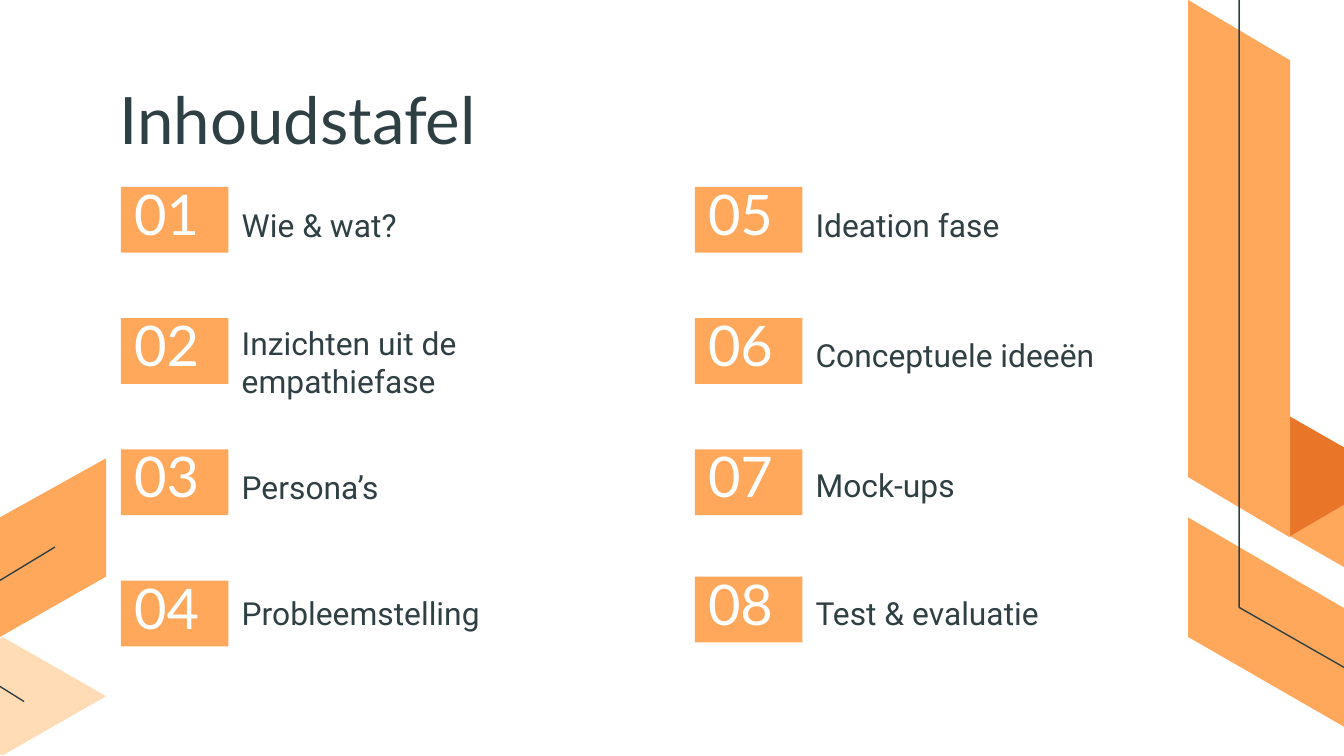
from dataclasses import dataclass

from pptx import Presentation
from pptx.dml.color import RGBColor
from pptx.enum.shapes import MSO_SHAPE
from pptx.enum.text import MSO_ANCHOR as Anchor, MSO_AUTO_SIZE as AutoSize, PP_ALIGN as Align
from pptx.util import Inches, Pt

ORANGE = RGBColor(0xFF, 0xA8, 0x5C)
PALE = RGBColor(0xFF, 0xDC, 0xB6)
BURNT = RGBColor(0xE9, 0x75, 0x29)
DARK = RGBColor(0x2F, 0x40, 0x44)
WHITE = RGBColor(0xFF, 0xFF, 0xFF)

SLIDE_WIDTH = Inches(10)
SLIDE_HEIGHT = SLIDE_WIDTH * 9 // 16

# Grid of the contents list, in inches
COLUMN_LEFTS = (0.9, 5.17)
ROWS = 4
FIRST_ROW, LAST_ROW = 1.39, 4.32
ROW_PITCH = (LAST_ROW - FIRST_ROW) / (ROWS - 1)
BADGE_WIDTH, BADGE_HEIGHT = 0.8, 0.49
LABEL_DROP, LABEL_HEIGHT = 0.04, 0.42


@dataclass(frozen=True)
class Entry:
    label: str
    width: float = 2.26
    label_shift: float = 0
    badge_shift: float = 0


@dataclass(frozen=True)
class Band:
    points: tuple[tuple[float, float], ...]
    fill: RGBColor


ENTRIES = (
    Entry("Wie & wat?"),
    Entry("Inzichten uit de empathiefase", 2.52, label_shift=-0.1),
    Entry("Persona’s"),
    Entry("Probleemstelling", label_shift=-0.04),
    Entry("Ideation fase"),
    Entry("Conceptuele ideeën", 2.43, label_shift=-0.01),
    Entry("Mock-ups", 2.43, label_shift=-0.02),
    Entry("Test & evaluatie", 2.43, label_shift=-0.04, badge_shift=-0.03),
)

BANDS = (
    Band(((0, 3.85), (0.79, 3.41), (0.79, 4.29), (0, 4.74)), ORANGE),
    Band(((0.02, 5.62), (-0.75, 5.18), (0.02, 4.74), (0.79, 5.18)), PALE),
    Band(((10.37, 4.43), (11.14, 3.99), (10.37, 3.54), (9.6, 3.99)), ORANGE),
    Band(((10.37, 3.54), (9.6, 3.99), (9.6, 3.1)), BURNT),
    Band(((8.84, 0), (8.84, 3.55), (9.6, 4), (9.6, 0.45)), ORANGE),
    Band(((8.84, 4.74), (8.84, 3.85), (10.37, 4.74), (10.37, 5.62)), ORANGE),
)

THIN_LINES = (
    ((0.18, 5.22), (-0.3, 4.92), (-0.3, 4.5), (0.41, 4.07)),
    ((9.22, 0), (9.22, 4.52), (10.83, 5.44)),
)


def write(box, text: str, *, font: str, size: float, color: RGBColor,
          top_inset: float = 0, anchor=Anchor.TOP) -> None:
    frame = box.text_frame
    frame.word_wrap = True
    frame.auto_size = AutoSize.NONE
    frame.vertical_anchor = anchor
    frame.margin_left = frame.margin_right = frame.margin_bottom = Inches(0.1)
    frame.margin_top = Inches(top_inset)
    para = frame.paragraphs[0]
    para.alignment = Align.LEFT
    span = para.add_run()
    span.text = text
    span.font.name = font
    span.font.size = Pt(size)
    span.font.color.rgb = color


def draw_outline(page, points, close: bool):
    corners = [(Inches(x), Inches(y)) for x, y in points]
    builder = page.shapes.build_freeform(*corners[0])
    builder.add_line_segments(corners[1:], close=close)
    shape = builder.convert_to_shape()
    shape.shadow.inherit = False
    return shape


def draw_band(page, band: Band) -> None:
    shape = draw_outline(page, band.points, close=True)
    shape.fill.solid()
    shape.fill.fore_color.rgb = band.fill
    shape.line.fill.background()


def draw_thin_line(page, points) -> None:
    shape = draw_outline(page, points, close=False)
    shape.fill.background()
    shape.line.color.rgb = DARK
    shape.line.width = Pt(0.75)


def draw_entry(page, index: int, entry: Entry) -> None:
    column, row = divmod(index, ROWS)
    left = COLUMN_LEFTS[column]
    top = FIRST_ROW + row * ROW_PITCH

    badge = page.shapes.add_shape(
        MSO_SHAPE.RECTANGLE, Inches(left), Inches(top + entry.badge_shift),
        Inches(BADGE_WIDTH), Inches(BADGE_HEIGHT))
    badge.shadow.inherit = False
    badge.fill.solid()
    badge.fill.fore_color.rgb = ORANGE
    badge.line.fill.background()
    write(badge, f"{index + 1:02}", font="Lato", size=30, color=WHITE, anchor=Anchor.MIDDLE)

    label = page.shapes.add_textbox(
        Inches(left + BADGE_WIDTH), Inches(top + LABEL_DROP + entry.label_shift),
        Inches(entry.width), Inches(LABEL_HEIGHT))
    write(label, entry.label, font="Roboto", size=17, color=DARK, top_inset=0.1)


def main() -> None:
    deck = Presentation()
    deck.slide_width, deck.slide_height = SLIDE_WIDTH, SLIDE_HEIGHT
    page = deck.slides.add_slide(deck.slide_layouts[5])

    title = page.shapes.title
    title.left, title.top = Inches(0.79), Inches(0.59)
    title.width, title.height = Inches(7.75), Inches(0.57)
    write(title, "Inhoudstafel", font="Lato", size=35, color=DARK)

    for band in BANDS:
        draw_band(page, band)
    for points in THIN_LINES:
        draw_thin_line(page, points)
    for index, entry in enumerate(ENTRIES):
        draw_entry(page, index, entry)

    deck.save("out.pptx")


if __name__ == "__main__":
    main()
